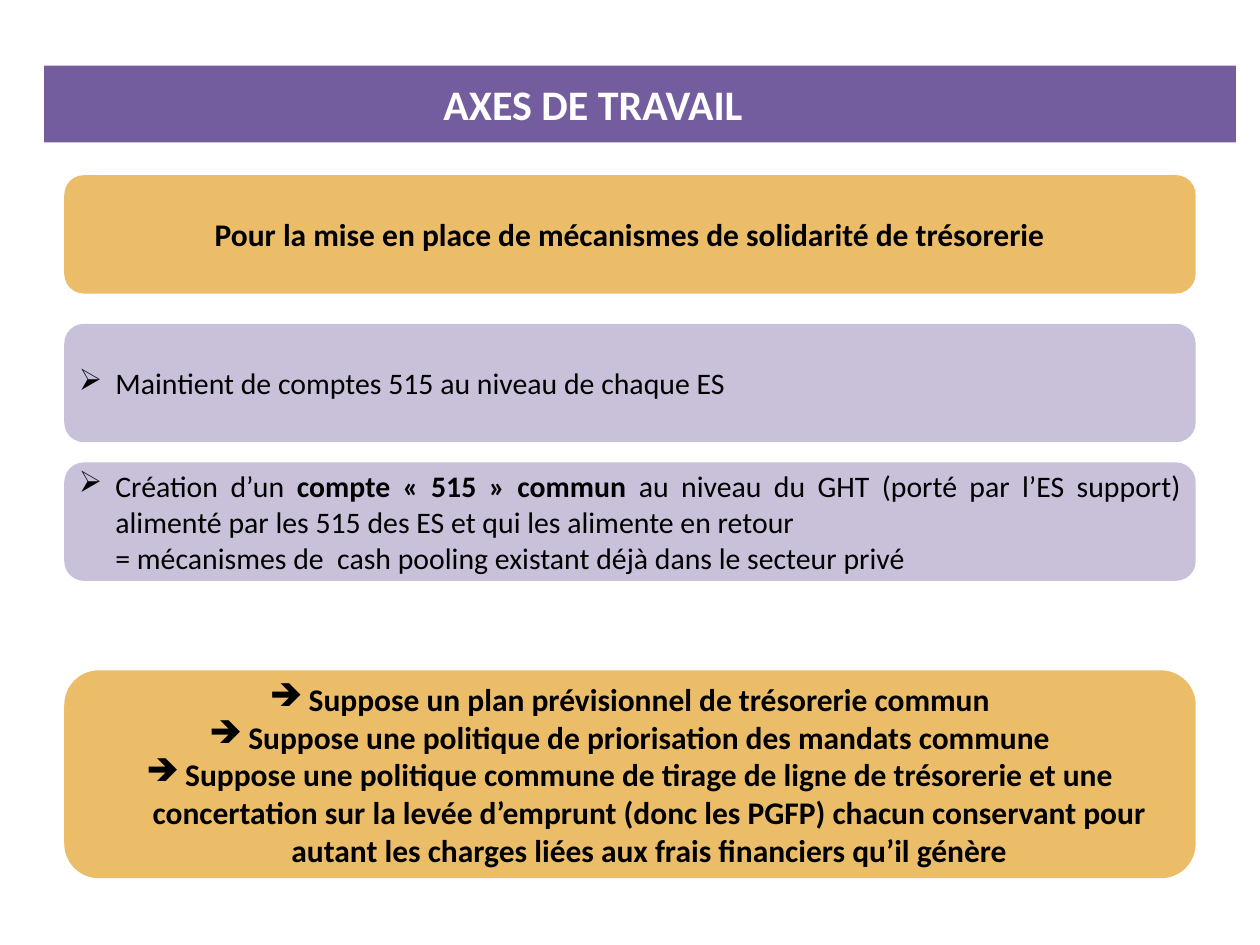
from dataclasses import dataclass
from typing import Any

from lxml import etree
from pptx import Presentation
from pptx.dml.color import RGBColor
from pptx.enum.shapes import MSO_SHAPE
from pptx.enum.text import MSO_ANCHOR, PP_ALIGN
from pptx.oxml.ns import qn
from pptx.util import Inches, Pt

RECT, ROUNDED = MSO_SHAPE.RECTANGLE, MSO_SHAPE.ROUNDED_RECTANGLE
LEFT, CENTER, JUSTIFY = PP_ALIGN.LEFT, PP_ALIGN.CENTER, PP_ALIGN.JUSTIFY
MIDDLE = MSO_ANCHOR.MIDDLE

CELL = 0.1  # the slide is a grid of 100 columns by 75 rows
COLUMNS, ROWS = 100, 75


def grid(cells):
    return Inches(cells * CELL)


def color(hex_value):
    return RGBColor.from_string(hex_value)


@dataclass
class Deck:
    slide: Any
    font: str = "Calibri"
    purple: str = "735D9F"
    lilac: str = "C9C0DA"
    gold: str = "ECBD68"
    white: str = "FFFFFF"
    black: str = "000000"

    def panel(self, kind, left, top, width, height, fill):
        """Add a filled panel and return its text frame."""
        panel = self.slide.shapes.add_shape(
            kind, grid(left), grid(top), grid(width), grid(height))
        panel.shadow.inherit = False
        panel.fill.solid()
        panel.fill.fore_color.rgb = color(fill)
        panel.line.fill.background()
        frame = panel.text_frame
        frame.word_wrap = True
        frame.vertical_anchor = MIDDLE
        frame.margin_left = frame.margin_right = grid(0.7)
        frame.margin_top = frame.margin_bottom = grid(0.4)
        return frame

    def paragraph(self, frame, runs, size, align, ink=None, indent=0, bullet=None):
        """Write (text, bold) runs; a bullet hangs to the left of the indent."""
        first = frame.paragraphs[0]
        paragraph = frame.add_paragraph() if first.runs else first
        paragraph.alignment = align
        properties = paragraph._p.get_or_add_pPr()
        properties.set("marL", str(grid(indent)))
        properties.set("indent", str(-grid(indent) if bullet else 0))
        if bullet:
            mark = etree.SubElement(properties, qn("a:buChar"))
            mark.set("char", bullet)
        for text, bold in runs:
            run = paragraph.add_run()
            run.text = text
            run.font.name = self.font
            run.font.size = Pt(size)
            run.font.bold = bold
            run.font.color.rgb = color(ink or self.black)


def main():
    prs = Presentation()
    prs.slide_width, prs.slide_height = grid(COLUMNS), grid(ROWS)
    deck = Deck(prs.slides.add_slide(prs.slide_layouts[6]))
    left, width, row_height = 5.1, 89.8, 9.4

    title = deck.panel(RECT, 3.5, 5.2, 94.6, 6.1, deck.purple)
    deck.paragraph(title, [("AXES DE TRAVAIL", True)], 24, LEFT, deck.white, indent=31)

    goal = deck.panel(ROUNDED, left, 13.9, width, row_height, deck.gold)
    deck.paragraph(goal, [
        ("Pour la mise en place de mécanismes de solidarité de trésorerie", True),
    ], 18, CENTER)

    accounts = [
        [("Maintient de comptes 515 au niveau de chaque ES", False)],
        [("Création d’un ", False),
         ("compte « 515 » commun", True),
         (" au niveau du GHT (porté par l’ES support) alimenté par les 515 "
          "des ES et qui les alimente en retour", False)],
    ]
    for index, runs in enumerate(accounts):
        axis = deck.panel(ROUNDED, left, 25.7 + 11 * index, width, row_height, deck.lilac)
        deck.paragraph(axis, runs, 17, JUSTIFY, indent=2.9, bullet="➢")
    deck.paragraph(axis, [
        ("= mécanismes de  cash pooling existant déjà dans le secteur privé", False),
    ], 17, JUSTIFY, indent=2.9)

    conditions = deck.panel(ROUNDED, left, 53.2, width, 16.5, deck.gold)
    for condition in (
        "Suppose un plan prévisionnel de trésorerie commun",
        "Suppose une politique de priorisation des mandats commune",
        "Suppose une politique commune de tirage de ligne de trésorerie et une "
        "concertation sur la levée d’emprunt (donc les PGFP) chacun conservant "
        "pour autant les charges liées aux frais financiers qu’il génère",
    ):
        deck.paragraph(conditions, [(condition, True)], 18, CENTER, indent=3.1, bullet="➔")

    prs.save("out.pptx")


if __name__ == "__main__":
    main()
